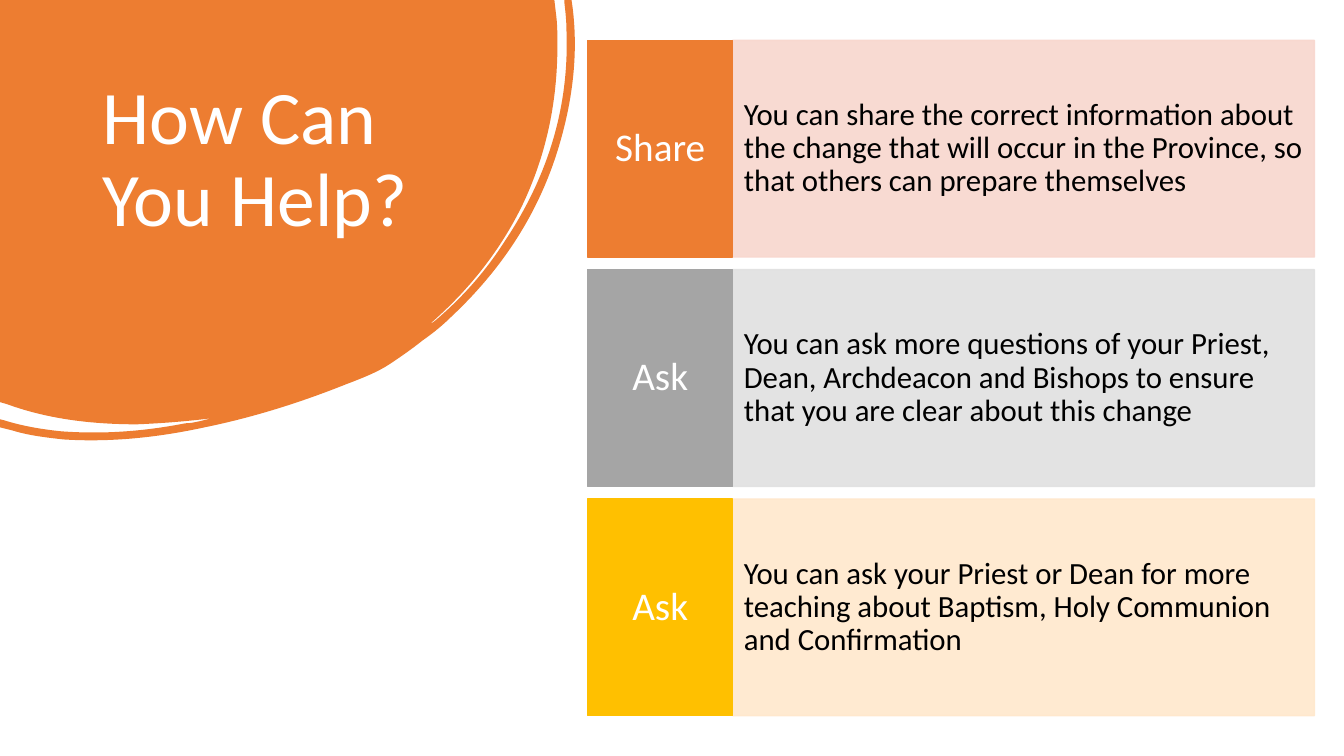
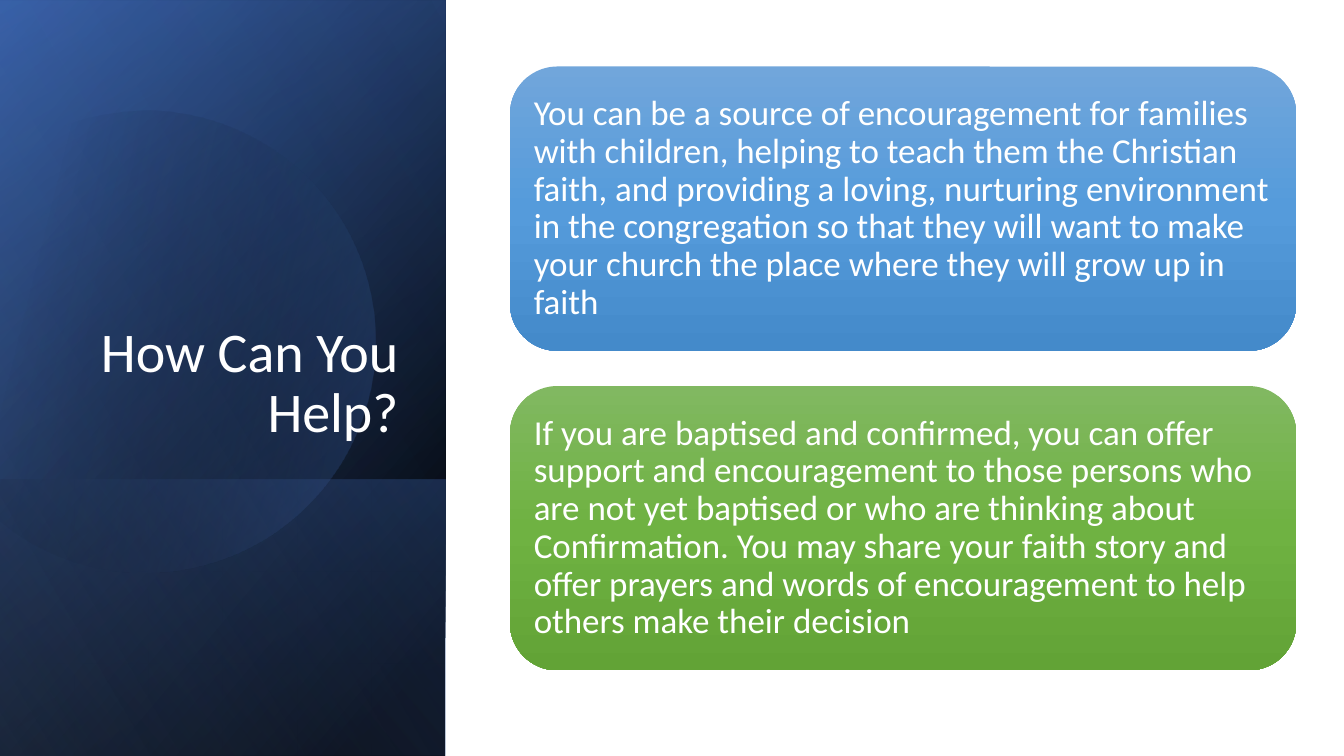
from lxml import etree
from pptx import Presentation
from pptx.dml.color import RGBColor
from pptx.enum import shapes, text
from pptx.oxml import ns
from pptx.util import Inches, Pt

COLOURS = {
    "orange": "ED7D31", "grey": "A5A5A5", "gold": "FFC000",
    "pale_orange": "F8D7CE", "pale_grey": "E1E1E1", "pale_gold": "FFE8CC",
    "black": "000000", "white": "FFFFFF",
    "navy": "2F5597", "blue": "4472C4", "light_blue": "8FAADC",
    "sky_top": "71A6DB", "sky": "559BDB", "sky_bottom": "448ACA",
    "green_top": "81B861", "green": "6FB242", "green_bottom": "62A336",
}
FONT = "Calibri"
TITLE = "How Can You Help?"
LEFT, CENTRE, RIGHT = text.PP_ALIGN.LEFT, text.PP_ALIGN.CENTER, text.PP_ALIGN.RIGHT
TOP, MIDDLE, BOTTOM = text.MSO_ANCHOR.TOP, text.MSO_ANCHOR.MIDDLE, text.MSO_ANCHOR.BOTTOM


def write(box, words, size, colour="white", align=LEFT, anchor=MIDDLE, inset=0.1):
    frame = box.text_frame
    frame_format = {
        "word_wrap": True, "vertical_anchor": anchor,
        "margin_left": Inches(inset), "margin_right": Inches(inset),
        "margin_top": Inches(0.05), "margin_bottom": Inches(0.05),
    }
    para = frame.paragraphs[0]
    span = para.add_run()
    span.text = words
    span.font.color.rgb = RGBColor.from_string(COLOURS[colour])
    for target, values in (
        (frame, frame_format),
        (para, {"alignment": align, "line_spacing": 0.9}),
        (span.font, {"name": FONT, "size": Pt(size)}),
    ):
        for name, value in values.items():
            setattr(target, name, value)


def paint_gradient(shape, stops, angle):
    shape.shadow.inherit = False
    shape.line.fill.background()
    shape.fill.background()
    empty_fill = shape.element.spPr.find(ns.qn("a:noFill"))
    gradient = etree.Element(ns.qn("a:gradFill"), rotWithShape="1")
    stop_list = etree.SubElement(gradient, ns.qn("a:gsLst"))
    for position, colour, opacity in stops:
        stop = etree.SubElement(stop_list, ns.qn("a:gs"), pos=str(position * 1000))
        tint = etree.SubElement(stop, ns.qn("a:srgbClr"), val=COLOURS[colour])
        if opacity < 100:
            etree.SubElement(tint, ns.qn("a:alpha"), val=str(opacity * 1000))
    etree.SubElement(gradient, ns.qn("a:lin"), ang=str(angle * 60000), scaled="0")
    empty_fill.getparent().replace(empty_fill, gradient)


deck = Presentation()
deck.slide_width, deck.slide_height = Inches(40 / 3), Inches(7.5)
share_page, support_page = [deck.slides.add_slide(deck.slide_layouts[6]) for _ in range(2)]

side_layers = [
    (-1.54, 1.54, 7.5, [(8, "black", 100), (100, "navy", 100)], 50),
    (-1.54, 1.55, 7.5, [(0, "black", 0), (99, "blue", 46)], 30),
    (0.84, 3.92, 2.74, [(2, "blue", 29), (100, "black", 30)], 130),
    (-1.54, 1.54, 7.5, [(0, "black", 0), (99, "light_blue", 11)], 120),
]
panels = []
for left, top, length, stops, angle in side_layers:
    panel = support_page.shapes.add_shape(
        shapes.MSO_SHAPE.RECTANGLE, Inches(left), Inches(top), Inches(length), Inches(4.42))
    panel.rotation = 90
    panel.element.spPr.find(ns.qn("a:xfrm")).set("flipH", "1")
    paint_gradient(panel, stops, angle)
    panels.append(panel)

swoosh_steps = [
    (0, 0), (5.5, 0), (5.52, 0.17),
    (5.53, 0.26, 5.53, 0.36, 5.53, 0.45), (5.53, 1.01, 5.42, 1.54, 5.18, 2.04),
    (4.96, 2.49, 4.65, 2.88, 4.27, 3.21), (4.29, 3.21, 4.3, 3.19, 4.32, 3.18),
    (4.59, 2.95, 4.82, 2.69, 5.01, 2.39), (5.43, 1.76, 5.65, 1.07, 5.62, 0.3),
    (5.62, 0.21, 5.61, 0.12, 5.6, 0.03), (5.6, 0), (5.67, 0), (5.68, 0.07),
    (5.74, 0.54, 5.68, 1.02, 5.53, 1.5), (5.33, 2.14, 4.97, 2.68, 4.48, 3.14),
    (4.39, 3.23, 4.29, 3.31, 4.19, 3.38), (4.09, 3.46, 3.99, 3.53, 3.87, 3.61),
    (3.75, 3.69, 3.6, 3.75, 3.44, 3.81), (2.99, 3.99, 2.52, 4.14, 2.03, 4.24),
    (1.57, 4.34, 1.1, 4.39, 0.63, 4.36), (0.45, 4.34, 0.28, 4.32, 0.12, 4.27),
    (0, 4.24), (0, 4.16), (0.04, 4.17),
    (0.23, 4.23, 0.42, 4.26, 0.61, 4.28), (1.03, 4.31, 1.43, 4.28, 1.84, 4.2),
    (1.89, 4.2, 1.93, 4.19, 1.98, 4.18), (2.02, 4.17, 2.06, 4.16, 2.1, 4.15),
    (1.86, 4.18, 1.61, 4.2, 1.36, 4.21), (0.92, 4.21, 0.48, 4.16, 0.07, 4.01),
    (0, 3.99),
]
disc_steps = [
    (2.12, 1.16), (3.04, 1.45, 3.72, 2.32, 3.72, 3.34),
    (3.72, 4.61, 2.69, 5.63, 1.43, 5.63), (0.64, 5.63, -0.06, 5.23, -0.46, 4.62),
    (-0.55, 4.48), (0.36, 1.33), (0.54, 1.24),
    (0.82, 1.12, 1.12, 1.06, 1.43, 1.06), (1.67, 1.06, 1.9, 1.1, 2.12, 1.16),
]
curved = []
for page, steps in ((share_page, swoosh_steps), (support_page, disc_steps)):
    anchors = [(Inches(step[-2]), Inches(step[-1])) for step in steps]
    builder = page.shapes.build_freeform(*anchors[0])
    builder.add_line_segments(anchors[1:], close=True)
    shape = builder.convert_to_shape()
    segments = list(shape.element.spPr.iter(ns.qn("a:lnTo")))
    for segment, step in zip(segments, steps[1:]):
        if len(step) == 6:
            curve = etree.Element(ns.qn("a:cubicBezTo"))
            for x, y in zip(step[::2], step[1::2]):
                etree.SubElement(
                    curve, ns.qn("a:pt"),
                    x=str(Inches(x) - shape.left), y=str(Inches(y) - shape.top))
            segment.getparent().replace(segment, curve)
    curved.append(shape)
swoosh, disc = curved

swoosh.shadow.inherit = False
swoosh.fill.solid()
swoosh.fill.fore_color.rgb = RGBColor.from_string(COLOURS["orange"])
swoosh.line.fill.background()

disc.rotation = 343.9
paint_gradient(disc, [(29, "black", 0), (100, "blue", 43)], 30)
panels[-1].element.addprevious(disc.element)

for page, left, top, width, height, style in (
    (share_page, 0.92, 0.74, 3.52, 2.22, {"size": 54, "anchor": TOP}),
    (support_page, 0.64, 1.84, 3.41, 2.62, {"size": 40, "align": RIGHT, "anchor": BOTTOM}),
):
    title = page.shapes.add_textbox(Inches(left), Inches(top), Inches(width), Inches(height))
    write(title, TITLE, **style)

actions = [
    ("Share", "orange", "You can share the correct information about the change that will "
     "occur in the Province, so that others can prepare themselves"),
    ("Ask", "grey", "You can ask more questions of your Priest, Dean, Archdeacon and "
     "Bishops to ensure that you are clear about this change"),
    ("Ask", "gold", "You can ask your Priest or Dean for more teaching about Baptism, "
     "Holy Communion and Confirmation"),
]
for row, (label, colour, detail) in enumerate(actions):
    top = 0.4 + row * 4.55 / 2
    for left, width, fill, opacity, words, style in (
        (7.27, 5.77, "pale_" + colour, 90, detail,
         {"size": 22, "colour": "black", "inset": 0.11}),
        (5.83, 1.44, colour, 100, label, {"size": 28, "align": CENTRE, "inset": 0.08}),
    ):
        panel = share_page.shapes.add_shape(
            shapes.MSO_SHAPE.RECTANGLE,
            Inches(left), Inches(top), Inches(width), Inches(2.15))
        panel.shadow.inherit = False
        panel.line.width = Pt(1)
        panel.fill.solid()
        for paint in (panel.fill.fore_color, panel.line.color):
            paint.rgb = RGBColor.from_string(COLOURS[fill])
        if opacity < 100:
            for tint in panel.element.spPr.iter(ns.qn("a:srgbClr")):
                etree.SubElement(tint, ns.qn("a:alpha"), val=str(opacity * 1000))
        write(panel, words, **style)

offers = [
    ("sky", "You can be a source of encouragement for families with children, helping to "
     "teach them the Christian faith, and providing a loving, nurturing environment in the "
     "congregation so that they will want to make your church the place where they will "
     "grow up in faith"),
    ("green", "If you are baptised and confirmed, you can offer support and encouragement "
     "to those persons who are not yet baptised or who are thinking about Confirmation. "
     "You may share your faith story and offer prayers and words of encouragement to help "
     "others make their decision"),
]
for row, (colour, words) in enumerate(offers):
    card = support_page.shapes.add_shape(
        shapes.MSO_SHAPE.ROUNDED_RECTANGLE,
        Inches(5.06), Inches(0.66 + row * 3.17), Inches(7.8), Inches(2.82))
    paint_gradient(
        card, [(0, colour + "_top", 100), (50, colour, 100), (100, colour + "_bottom", 100)], 90)
    write(card, words, 25)

deck.save("out.pptx")
